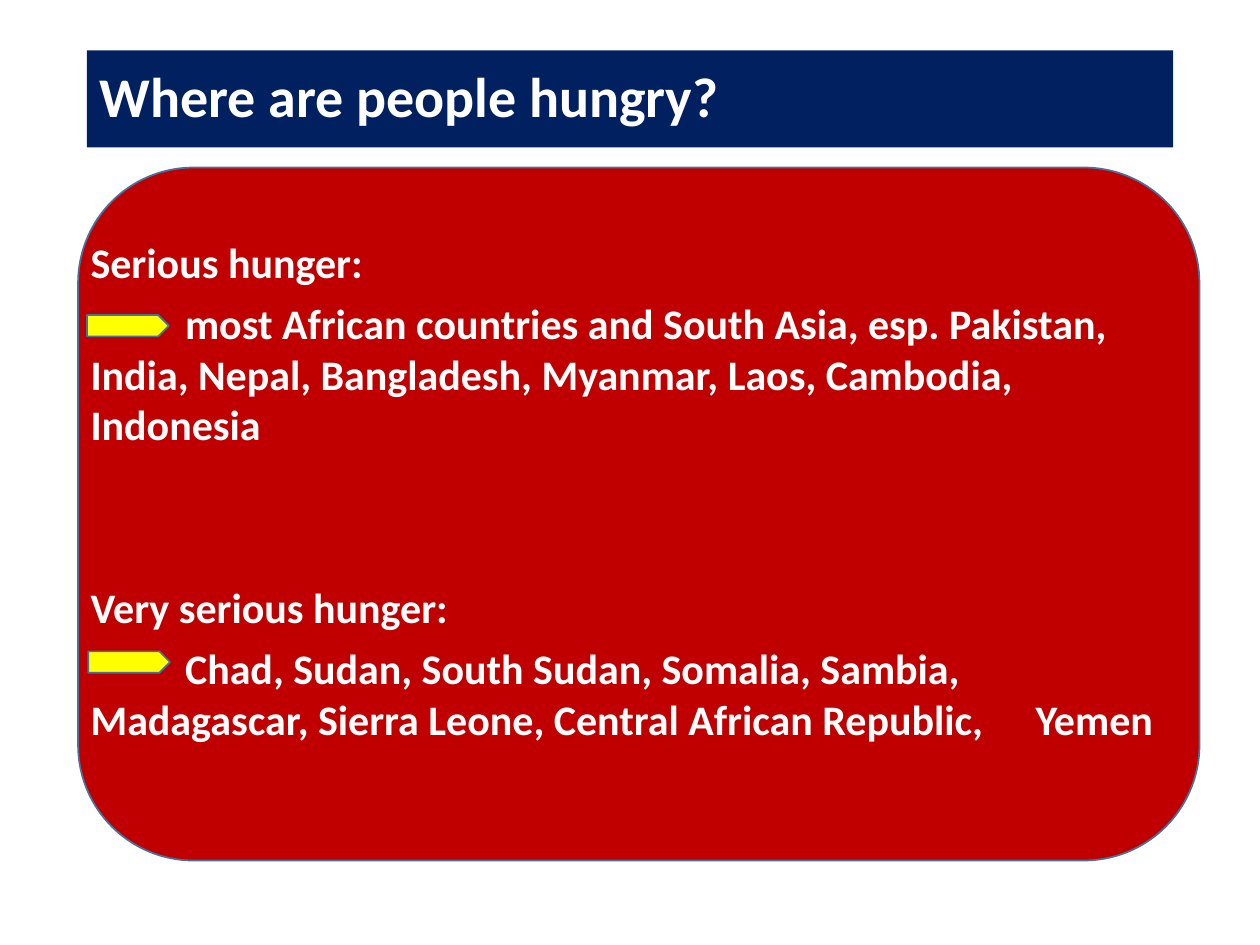
from lxml.etree import SubElement
from pptx import Presentation
from pptx.dml.color import RGBColor
from pptx.enum.shapes import MSO_SHAPE
from pptx.enum.text import MSO_ANCHOR, PP_ALIGN
from pptx.oxml.ns import qn
from pptx.util import Inches, Pt

COLORS = {"navy": "002060", "red": "C00000", "yellow": "FFFF00",
          "edge": "43739E", "white": "FFFFFF"}
TABS = (0.75, 7.5)
BODY = [
    ("Serious hunger:", 6),
    ("\tmost African countries and South Asia, esp. Pakistan, "
     "\tIndia, Nepal, Bangladesh, Myanmar, Laos, Cambodia, \tIndonesia", 6),
    ("Very serious hunger:", 76),
    ("\tChad, Sudan, South Sudan, Somalia, Sambia, "
     "\tMadagascar, Sierra Leone, Central African Republic, \tYemen", 6),
]


def color(name):
    return RGBColor.from_string(COLORS[name])


def add_box(slide, kind, place, fill, edge=None):
    box = slide.shapes.add_shape(kind, *map(Inches, place))
    box.shadow.inherit = False
    box.fill.solid()
    box.fill.fore_color.rgb = color(fill)
    if edge:
        box.line.color.rgb = color(edge)
        box.line.width = Pt(1)
    else:
        box.line.fill.background()
    return box


def set_font(para, size):
    para.alignment = PP_ALIGN.LEFT
    for run in para.runs:
        run.font.name = "Calibri"
        run.font.size = Pt(size)
        run.font.bold = True
        run.font.color.rgb = color("white")


def set_tabs(para):
    stops = SubElement(para._p.get_or_add_pPr(), qn("a:tabLst"))
    for pos in TABS:
        SubElement(stops, qn("a:tab"), pos=str(Inches(pos)), algn="l")


def add_title(slide, text):
    box = add_box(slide, MSO_SHAPE.RECTANGLE, (0.69, 0.4, 8.62, 0.77), "navy")
    frame = box.text_frame
    frame.text = text
    frame.word_wrap = True
    frame.vertical_anchor = MSO_ANCHOR.MIDDLE
    para = frame.paragraphs[0]
    para.line_spacing = 0.9
    set_font(para, 32)


def add_body(slide, items):
    box = slide.shapes.add_textbox(*map(Inches, (0.62, 1.83, 8.75, 5.25)))
    frame = box.text_frame
    frame.word_wrap = True
    frame.text = "\n".join(text for text, gap in items)
    for para, (text, gap) in zip(frame.paragraphs, items):
        para.space_before = Pt(gap)
        set_font(para, 24)
        set_tabs(para)


def main():
    deck = Presentation()
    deck.slide_width, deck.slide_height = Inches(10), Inches(7.5)
    slide = deck.slides.add_slide(deck.slide_layouts[6])
    add_title(slide, "Where are people hungry?")
    add_box(slide, MSO_SHAPE.ROUNDED_RECTANGLE, (0.62, 1.33, 8.9, 5.5),
            "red", "edge")
    add_body(slide, BODY)
    for left, top in ((0.69, 2.5), (0.7, 5.17)):
        add_box(slide, MSO_SHAPE.PENTAGON, (left, top, 0.65, 0.17),
                "yellow", "edge")
    deck.save("out.pptx")


if __name__ == "__main__":
    main()
